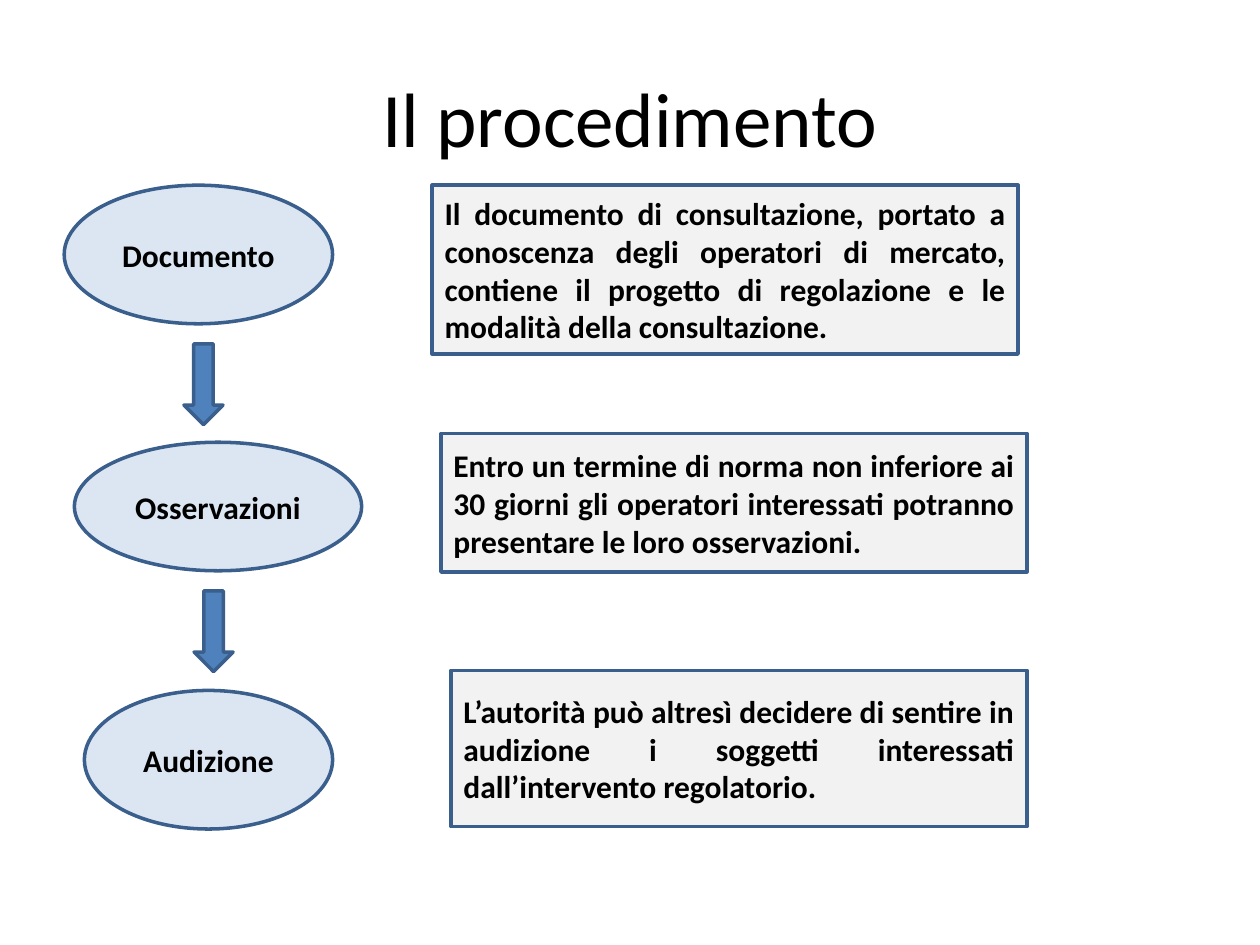
from pptx import Presentation
from pptx.dml.color import RGBColor
from pptx.enum.shapes import MSO_SHAPE as Shape
from pptx.enum.text import MSO_ANCHOR as Anchor, PP_ALIGN as Align
from pptx.util import Inches, Pt

FONT = "Calibri"
BLACK = RGBColor(0x00, 0x00, 0x00)
OUTLINE = RGBColor(0x3A, 0x5F, 0x8C)
STAGE_FILL = RGBColor(0xDC, 0xE6, 0xF2)
ARROW_FILL = RGBColor(0x4F, 0x81, 0xBD)
NOTE_FILL = RGBColor(0xF2, 0xF2, 0xF2)

STEPS = [
    ("Documento", (0.51, 1.47, 2.13, 1.1),
     "Il documento di consultazione, portato a conoscenza degli operatori di "
     "mercato, contiene il progetto di regolazione e le modalità della "
     "consultazione.", (3.43, 1.47, 4.65, 1.34)),
    ("Osservazioni", (0.59, 3.51, 2.28, 1.02),
     "Entro un termine di norma non inferiore ai 30 giorni gli operatori "
     "interessati potranno presentare le loro osservazioni.",
     (3.5, 3.44, 4.65, 1.1)),
    ("Audizione", (0.67, 5.48, 1.97, 1.1),
     "L’autorità può altresì decidere di sentire in audizione i soggetti "
     "interessati dall’intervento regolatorio.", (3.58, 5.32, 4.57, 1.24)),
]
ARROW_BOXES = [(1.46, 2.73, 0.31, 0.64), (1.54, 4.69, 0.31, 0.64)]


def write_text(shape, text, size, align, bold=False):
    """Put one formatted paragraph in a shape, centred vertically."""
    frame = shape.text_frame
    frame.text = text
    frame.word_wrap = True
    frame.vertical_anchor = Anchor.MIDDLE
    para = frame.paragraphs[0]
    para.alignment = align
    font = para.runs[0].font
    font.name, font.size, font.bold = FONT, Pt(size), bold
    font.color.rgb = BLACK


def add_outlined(page, kind, box, fill):
    """Add a filled preset shape with the common outline."""
    shape = page.shapes.add_shape(kind, *map(Inches, box))
    shape.shadow.inherit = False
    shape.fill.solid()
    shape.fill.fore_color.rgb = fill
    shape.line.color.rgb = OUTLINE
    shape.line.width = Pt(2)
    return shape


def place_title(page, text, box):
    """Position and format the title placeholder."""
    title = page.shapes.title
    title.left, title.top, title.width, title.height = map(Inches, box)
    write_text(title, text, 44, Align.CENTER)


def add_stage(page, name, box):
    """Add the ellipse that names a stage."""
    stage = add_outlined(page, Shape.OVAL, box, STAGE_FILL)
    write_text(stage, name, 18, Align.CENTER, bold=True)


def add_note(page, text, box):
    """Add the rectangle that explains a stage."""
    note = add_outlined(page, Shape.RECTANGLE, box, NOTE_FILL)
    write_text(note, text, 18, Align.JUSTIFY, bold=True)


def main():
    """Build and save the procedure slide."""
    deck = Presentation()
    deck.slide_width, deck.slide_height = Inches(10), Inches(7.5)
    page = deck.slides.add_slide(deck.slide_layouts[5])
    place_title(page, "Il procedimento", (0.5, 0.3, 9, 1.25))
    for name, stage_box, text, note_box in STEPS:
        add_stage(page, name, stage_box)
        add_note(page, text, note_box)
    for box in ARROW_BOXES:
        add_outlined(page, Shape.DOWN_ARROW, box, ARROW_FILL)
    deck.save("out.pptx")


if __name__ == "__main__":
    main()
